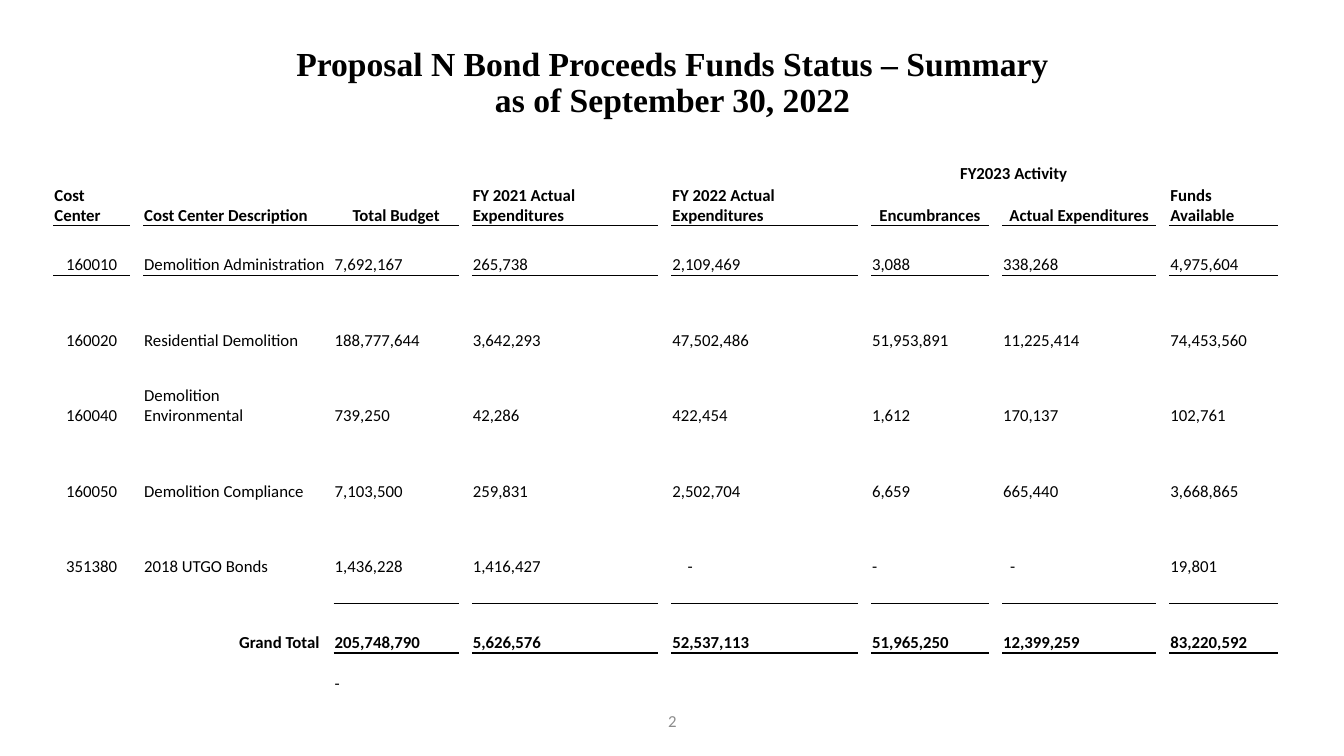
"""Build the bond proceeds funds status summary slide."""
from dataclasses import dataclass

from lxml import etree
from pptx import Presentation
from pptx import util as u
from pptx.dml.color import RGBColor
from pptx.enum import text
from pptx.oxml.ns import qn

TITLE = "Proposal N Bond Proceeds Funds Status – Summary\vas of September 30, 2022"
PAGE_NUMBER = "2"
ACTIVITY_HEADING = "FY2023 Activity"
HEADINGS = ["Cost Center", "Cost Center Description", "Total Budget",
            "FY 2021 Actual Expenditures", "FY 2022 Actual Expenditures",
            "Encumbrances", "Actual Expenditures", "Funds Available"]
COST_CENTERS = [
    ["160010", "Demolition Administration", "7,692,167", "265,738", "2,109,469", "3,088", "338,268", "4,975,604"],
    ["160020", "Residential Demolition", "188,777,644", "3,642,293", "47,502,486", "51,953,891", "11,225,414", "74,453,560"],
    ["160040", "Demolition Environmental", "739,250", "42,286", "422,454", "1,612", "170,137", "102,761"],
    ["160050", "Demolition Compliance", "7,103,500", "259,831", "2,502,704", "6,659", "665,440", "3,668,865"],
    ["351380", "2018 UTGO Bonds", "1,436,228", "1,416,427", "-", "-", "-", "19,801"],
]
GRAND_TOTAL = ["", "Grand Total", "205,748,790", "5,626,576", "52,537,113", "51,965,250", "12,399,259", "83,220,592"]
DIFFERENCE = "-"

WIDTHS = [0.76, 1.76, 1.24, 1.85, 1.85, 1.17, 1.53, 1.08]
GUTTER = 0.13
HEADING_ROWS = [0.27, 0.41]
ENTRY_ROW, SPACER_ROW, LAST_ROW = 0.49, 0.26, 0.41
TABLE_LEFT, TABLE_TOP = 0.53, 1.56
CENTERED_HEADINGS = {2, 5, 6}
DASH_INDENTS = {4: 0.15, 6: 0.07}
FIRST_AMOUNT, ENCUMBRANCES = 2, 5
PLAIN_STYLE = "{2D5ABB26-0587-4C30-8999-92F81FD0307C}"
LEFT, CENTER, RIGHT = text.PP_ALIGN.LEFT, text.PP_ALIGN.CENTER, text.PP_ALIGN.RIGHT


@dataclass(frozen=True)
class Theme:
    ink: str = "000000"
    muted: str = "8C8C8C"
    body_font: str = "Calibri"
    title_font: str = "Times New Roman"
    body_size: int = 12
    title_size: int = 24
    spacer_size: int = 6
    thin_rule: float = 0.5
    thick_rule: float = 2


THEME = Theme()


def write(frame, words, align=LEFT, size=THEME.body_size, font=THEME.body_font,
          color=THEME.ink, bold=False, spacing=None, indent=0):
    paragraph = frame.paragraphs[0]
    paragraph.text = words
    paragraph.alignment = align
    paragraph.line_spacing = spacing
    if indent:
        paragraph._p.get_or_add_pPr().set("marL", str(u.Inches(indent)))
    for run in paragraph.runs:
        run.font.size, run.font.name, run.font.bold = u.Pt(size), font, bold
        run.font.color.rgb = RGBColor.from_string(color)


def add_text(slide, words, left, top, width, height, **style):
    frame = slide.shapes.add_textbox(*map(u.Inches, (left, top, width, height))).text_frame
    frame.word_wrap = True
    frame.vertical_anchor = text.MSO_ANCHOR.MIDDLE
    write(frame, words, align=CENTER, **style)


def clear_cell(cell):
    cell.fill.background()
    cell.vertical_anchor = text.MSO_ANCHOR.BOTTOM
    cell.margin_left = cell.margin_right = cell.margin_top = u.Inches(0.01)
    cell.margin_bottom = 0
    ending = cell.text_frame.paragraphs[0]._p.get_or_add_endParaRPr()
    ending.set("sz", str(THEME.spacer_size * 100))


def add_border(cell, side, weight):
    line = etree.Element(qn(f"a:{side}"), w=str(u.Pt(weight)))
    fill = etree.SubElement(line, qn("a:solidFill"))
    etree.SubElement(fill, qn("a:srgbClr"), val=THEME.ink)
    cell._tc.get_or_add_tcPr().insert(0, line)


def add_rule(table, row, first_column, weight):
    for column in range(first_column, len(WIDTHS)):
        add_border(table.cell(row, column * 2), "lnB", weight)
        add_border(table.cell(row + 1, column * 2), "lnT", weight)


def add_summary_table(slide):
    entries = COST_CENTERS + [GRAND_TOTAL]
    widths = [size for width in WIDTHS for size in (width, GUTTER)][:-1]
    heights = HEADING_ROWS + [ENTRY_ROW, SPACER_ROW] * len(COST_CENTERS) + [ENTRY_ROW, LAST_ROW]
    bounds = map(u.Inches, (TABLE_LEFT, TABLE_TOP, sum(widths), sum(heights)))
    table = slide.shapes.add_table(len(heights), len(widths), *bounds).table
    table.first_row = table.horz_banding = False
    table._tbl.tblPr.find(qn("a:tableStyleId")).text = PLAIN_STYLE
    for column, width in zip(table.columns, widths):
        column.width = u.Inches(width)
    for row, height in zip(table.rows, heights):
        row.height = u.Inches(height)
    for cell in table.iter_cells():
        clear_cell(cell)

    activity = table.cell(0, ENCUMBRANCES * 2)
    activity.merge(table.cell(0, ENCUMBRANCES * 2 + 2))
    write(activity.text_frame, ACTIVITY_HEADING, align=CENTER, bold=True)
    table.cell(2, 2).merge(table.cell(2, 3))
    for column, heading in enumerate(HEADINGS):
        align = CENTER if column in CENTERED_HEADINGS else LEFT
        write(table.cell(1, column * 2).text_frame, heading, align=align, bold=True)

    for index, entry in enumerate(entries):
        is_total = entry is GRAND_TOTAL
        for column, words in enumerate(entry):
            if not words:
                continue
            align = CENTER if column == 0 else RIGHT if is_total and column == 1 else LEFT
            indent = DASH_INDENTS.get(column, 0) if words == "-" else 0
            write(table.cell(2 + index * 2, column * 2).text_frame, words,
                  align=align, bold=is_total, indent=indent)

    last = len(heights) - 1
    write(table.cell(last, FIRST_AMOUNT * 2).text_frame, DIFFERENCE)
    add_rule(table, last - 1, FIRST_AMOUNT, THEME.thick_rule)
    add_rule(table, last - 2, FIRST_AMOUNT, THEME.thin_rule)
    add_rule(table, 1, 0, THEME.thin_rule)


def main():
    presentation = Presentation()
    presentation.slide_width, presentation.slide_height = u.Inches(13.33), u.Inches(7.5)
    slide = presentation.slides.add_slide(presentation.slide_layouts[6])
    add_text(slide, TITLE, 0.92, 0.4, 11.5, 0.86, size=THEME.title_size,
             font=THEME.title_font, bold=True, spacing=0.9)
    add_summary_table(slide)
    add_text(slide, PAGE_NUMBER, 3.01, 6.95, 7.32, 0.4, color=THEME.muted)
    presentation.save("out.pptx")


if __name__ == "__main__":
    main()
